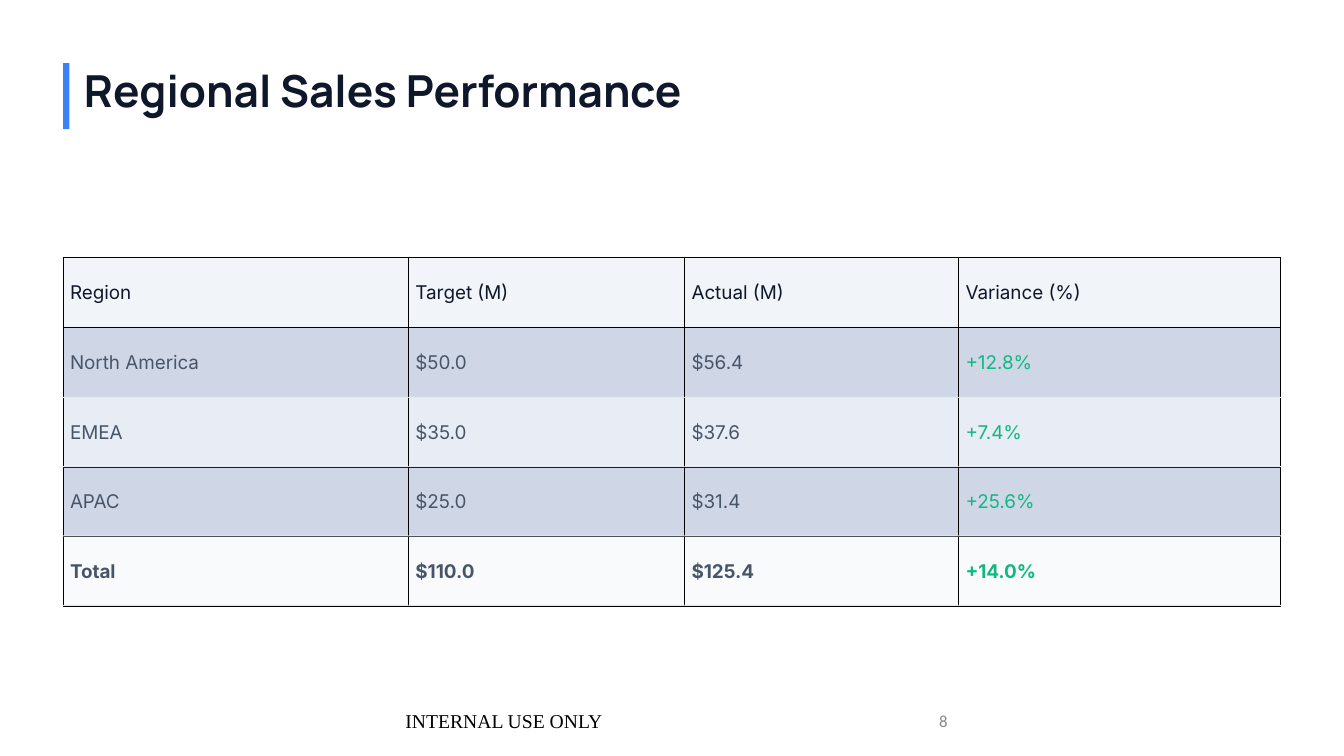
from itertools import accumulate

from lxml import etree
from pptx import Presentation
from pptx import util as u
from pptx.dml.color import RGBColor
from pptx.enum import shapes, text
from pptx.oxml import ns

Pt = u.Pt

# Content
TITLE = "Regional Sales Performance"
FOOTER = "INTERNAL USE ONLY"
PAGE = "8"
ROWS = [
    ("Region", "Target (M)", "Actual (M)", "Variance (%)"),
    ("North America", "$50.0", "$56.4", "+12.8%"),
    ("EMEA", "$35.0", "$37.6", "+7.4%"),
    ("APAC", "$25.0", "$31.4", "+25.6%"),
    ("Total", "$110.0", "$125.4", "+14.0%"),
]

# Colours
NAVY = RGBColor(0x0F, 0x17, 0x2A)
SLATE = RGBColor(0x47, 0x55, 0x69)
GREEN = RGBColor(0x10, 0xB9, 0x81)
BLUE = RGBColor(0x3B, 0x82, 0xF6)
RULE = RGBColor(0xE2, 0xE8, 0xF0)
GREY = RGBColor(0x88, 0x88, 0x88)
BLACK = RGBColor(0, 0, 0)
HEADER = RGBColor(0xF1, 0xF5, 0xF9)
BAND_DARK = RGBColor(0xCF, 0xD7, 0xE7)
BAND_LIGHT = RGBColor(0xE8, 0xEC, 0xF4)
TOTAL = RGBColor(0xF8, 0xFA, 0xFC)
ROW_FILLS = [HEADER, BAND_DARK, BAND_LIGHT, BAND_DARK, TOTAL]

# Layout in points
LEFT, TABLE_TOP, ROW_H = 45, 184.1, 49.84
COL_W = [246.75, 197.25, 195.75, 230.25]
COL_X = list(accumulate(COL_W[:-1], initial=LEFT))
RULE_TOP, RULE_STEP, RULE_H = 283.5, 49.5, 0.75

prs = Presentation()
prs.slide_width, prs.slide_height = Pt(960), Pt(540)
s = prs.slides.add_slide(prs.slide_layouts[6])


def style(p, size, font, color, bold=False):
    f = p.font
    f.size, f.name, f.bold = Pt(size), font, bold
    f.color.rgb = color


def add_bar(x, y, w, h, color):
    sp = s.shapes.add_shape(shapes.MSO_SHAPE.RECTANGLE, Pt(x), Pt(y), Pt(w), Pt(h))
    sp.shadow.inherit = False
    sp.fill.solid()
    sp.fill.fore_color.rgb = color
    sp.line.fill.background()


def add_text(box, words, size, font, color, bold=False, align=text.PP_ALIGN.LEFT,
             anchor=text.MSO_ANCHOR.MIDDLE, margins=(7.2, 3.6)):
    tf = s.shapes.add_textbox(*map(Pt, box)).text_frame
    tf.word_wrap = True
    tf.vertical_anchor = anchor
    tf.margin_left = tf.margin_right = Pt(margins[0])
    tf.margin_top = tf.margin_bottom = Pt(margins[1])
    p = tf.paragraphs[0]
    p.text, p.alignment = words, align
    style(p, size, font, color, bold)


def add_borders(cell):
    tc_pr = cell._tc.get_or_add_tcPr()
    for side in ("lnL", "lnR", "lnT", "lnB"):
        ln = etree.SubElement(tc_pr, ns.qn(f"a:{side}"), w=str(Pt(0.75)))
        fill = etree.SubElement(ln, ns.qn("a:solidFill"))
        etree.SubElement(fill, ns.qn("a:srgbClr"), val=str(BLACK))


# Sales table
table = s.shapes.add_table(len(ROWS), len(COL_W), Pt(LEFT), Pt(TABLE_TOP),
                           Pt(sum(COL_W)), Pt(ROW_H * len(ROWS))).table
for column, width in zip(table.columns, COL_W):
    column.width = Pt(width)
for i, values in enumerate(ROWS):
    table.rows[i].height = Pt(ROW_H)
    for j, value in enumerate(values):
        cell = table.cell(i, j)
        add_borders(cell)
        cell.fill.solid()
        cell.fill.fore_color.rgb = ROW_FILLS[i]
        cell.vertical_anchor = text.MSO_ANCHOR.MIDDLE
        cell.margin_left = cell.margin_right = Pt(5)
        cell.margin_top = cell.margin_bottom = Pt(3.6)
        p = cell.text_frame.paragraphs[0]
        p.text = value
        color = NAVY if i == 0 else GREEN if j == len(values) - 1 else SLATE
        style(p, 13.5, "Inter", color, bold=i == len(ROWS) - 1)

# Thin rules under the body rows
for i in range(len(ROWS) - 1):
    for x, width in zip(COL_X, COL_W):
        add_bar(x, RULE_TOP + i * RULE_STEP, width, RULE_H, RULE)

# Title with accent bar
add_text((60, 45, 772, 37.5), TITLE, 31.5, "Manrope", NAVY, bold=True,
         anchor=text.MSO_ANCHOR.TOP, margins=(0, 0))
add_bar(LEFT, 45, 4.5, 47.25, BLUE)

# Footer
add_text((246, 500.5, 228, 28.75), FOOTER, 14, "Times New Roman", BLACK,
         align=text.PP_ALIGN.CENTER)
add_text((516, 500.5, 168, 28.75), PAGE, 12, "Calibri", GREY,
         align=text.PP_ALIGN.RIGHT)

prs.save("out.pptx")
